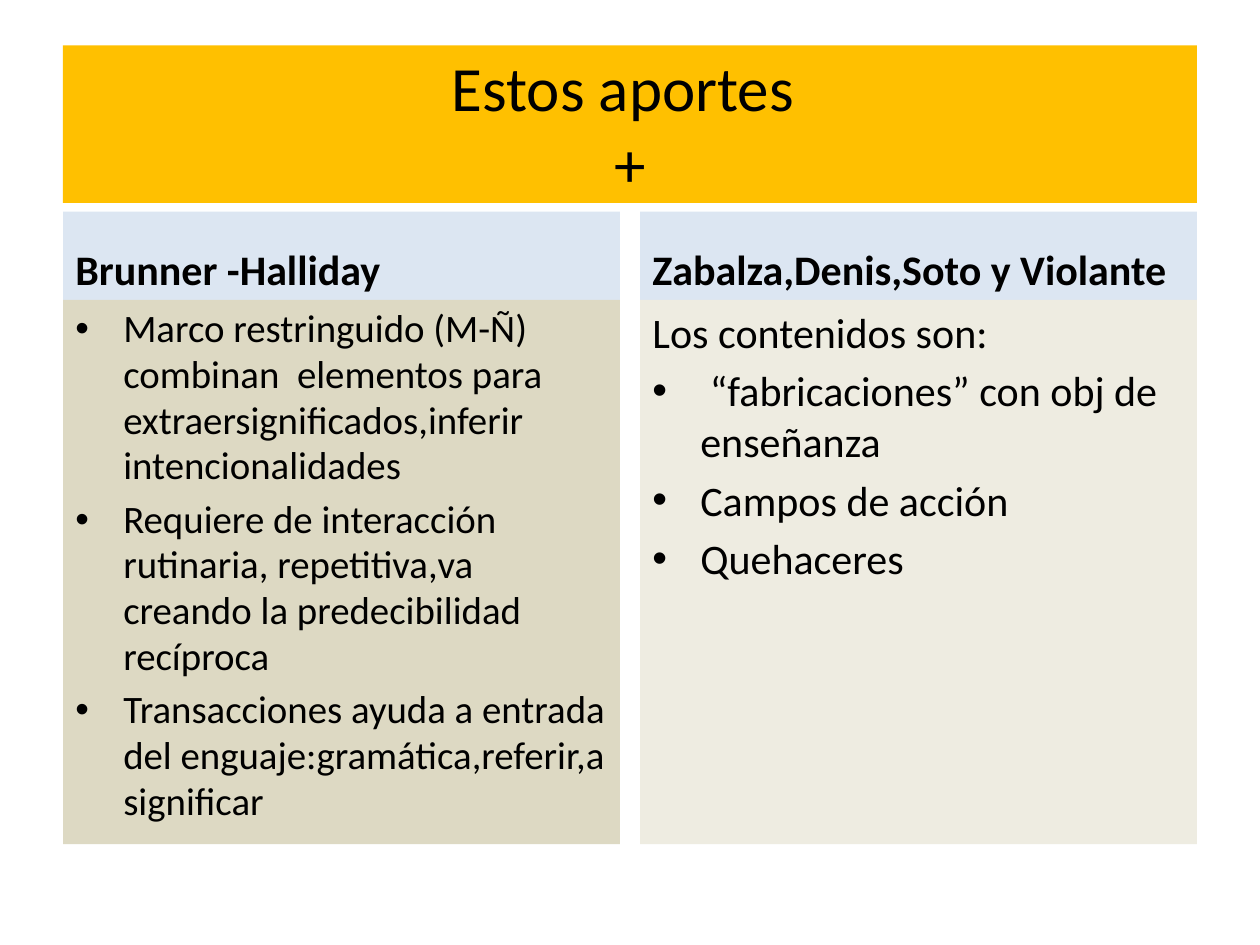
import pptx
import pptx.dml.color
import pptx.enum.shapes
import pptx.enum.text
import pptx.util
from lxml import etree

SLIDE_WIDTH, SLIDE_HEIGHT = 10, 7.5
MARGIN = 0.5
GUTTER = 0.16
COLUMN_WIDTH = (SLIDE_WIDTH - 2 * MARGIN - GUTTER) / 2
TITLE_TOP, TITLE_HEIGHT = 0.36, 1.25
HEADING_TOP, HEADING_HEIGHT = 1.68, 0.7
BODY_TOP, BODY_HEIGHT = HEADING_TOP + HEADING_HEIGHT, 4.32
INDENT = 0.38

ANCHOR = pptx.enum.text.MSO_ANCHOR
ALIGN = pptx.enum.text.PP_ALIGN

# heading, body fill, body size, line spacing, (text, bulleted)
COLUMNS = [
    ("Brunner -Halliday", "DDD9C3", 22.2, 0.985, [
        ("Marco restringuido (M-Ñ) combinan  elementos para "
         "extraersignificados,inferir intencionalidades", True),
        ("Requiere de interacción rutinaria, repetitiva,va creando la "
         "predecibilidad recíproca", True),
        ("Transacciones ayuda a entrada del enguaje:gramática,referir,a "
         "significar", True),
    ]),
    ("Zabalza,Denis,Soto y Violante", "EEECE1", 24, 1.0, [
        ("Los contenidos son:", False),
        (" “fabricaciones” con obj de enseñanza", True),
        ("Campos de acción", True),
        ("Quehaceres", True),
    ]),
]


def color(hex_value):
    return pptx.dml.color.RGBColor.from_string(hex_value)


def add_panel(slide, left, top, width, height, fill, anchor):
    """Add a borderless filled rectangle and return its text frame."""
    panel = slide.shapes.add_shape(
        pptx.enum.shapes.MSO_SHAPE.RECTANGLE,
        *(pptx.util.Inches(length) for length in (left, top, width, height)))
    panel.shadow.inherit = False
    panel.fill.solid()
    panel.fill.fore_color.rgb = color(fill)
    panel.line.fill.background()
    frame = panel.text_frame
    frame.word_wrap = True
    frame.vertical_anchor = anchor
    return frame


def write_lines(frame, lines, size, align=ALIGN.LEFT, bold=False,
                space_before=0.2, line_spacing=1.0):
    """Fill the frame, one paragraph a line; space_before is a share of size."""
    frame.text = "\n".join(lines)
    for paragraph in frame.paragraphs:
        paragraph.alignment = align
        paragraph.line_spacing = line_spacing
        paragraph.space_before = pptx.util.Pt(space_before * size)
        for run in paragraph.runs:
            run.font.name = "Calibri"
            run.font.size = pptx.util.Pt(size)
            run.font.bold = bold
            run.font.color.rgb = color("000000")


def set_hanging_indent(paragraph, bulleted):
    properties = paragraph._p.get_or_add_pPr()
    indent = pptx.util.Inches(INDENT)
    properties.set("marL", str(indent))
    properties.set("indent", str(-indent))
    if bulleted:
        namespace = pptx.oxml.ns.qn
        etree.SubElement(properties, namespace("a:buFont"), typeface="Arial")
        etree.SubElement(properties, namespace("a:buChar"), char="•")


def add_title(slide):
    frame = add_panel(slide, MARGIN, TITLE_TOP, SLIDE_WIDTH - 2 * MARGIN,
                      TITLE_HEIGHT, "FFC000", ANCHOR.MIDDLE)
    write_lines(frame, ["Estos aportes ", "+"], 36, ALIGN.CENTER, space_before=0)


def add_column(slide, index, heading, fill, size, line_spacing, points):
    left = MARGIN + index * (COLUMN_WIDTH + GUTTER)
    heading_frame = add_panel(slide, left, HEADING_TOP, COLUMN_WIDTH,
                              HEADING_HEIGHT, "DCE6F2", ANCHOR.BOTTOM)
    write_lines(heading_frame, [heading], 24, bold=True)

    body_frame = add_panel(slide, left, BODY_TOP, COLUMN_WIDTH,
                           BODY_HEIGHT, fill, ANCHOR.TOP)
    write_lines(body_frame, [text for text, _ in points], size,
                line_spacing=line_spacing)
    for paragraph, (_, bulleted) in zip(body_frame.paragraphs, points):
        set_hanging_indent(paragraph, bulleted)


def main():
    presentation = pptx.Presentation()
    presentation.slide_width = pptx.util.Inches(SLIDE_WIDTH)
    presentation.slide_height = pptx.util.Inches(SLIDE_HEIGHT)
    slide = presentation.slides.add_slide(presentation.slide_layouts[6])
    add_title(slide)
    for index, column in enumerate(COLUMNS):
        add_column(slide, index, *column)
    presentation.save("out.pptx")


if __name__ == "__main__":
    main()
